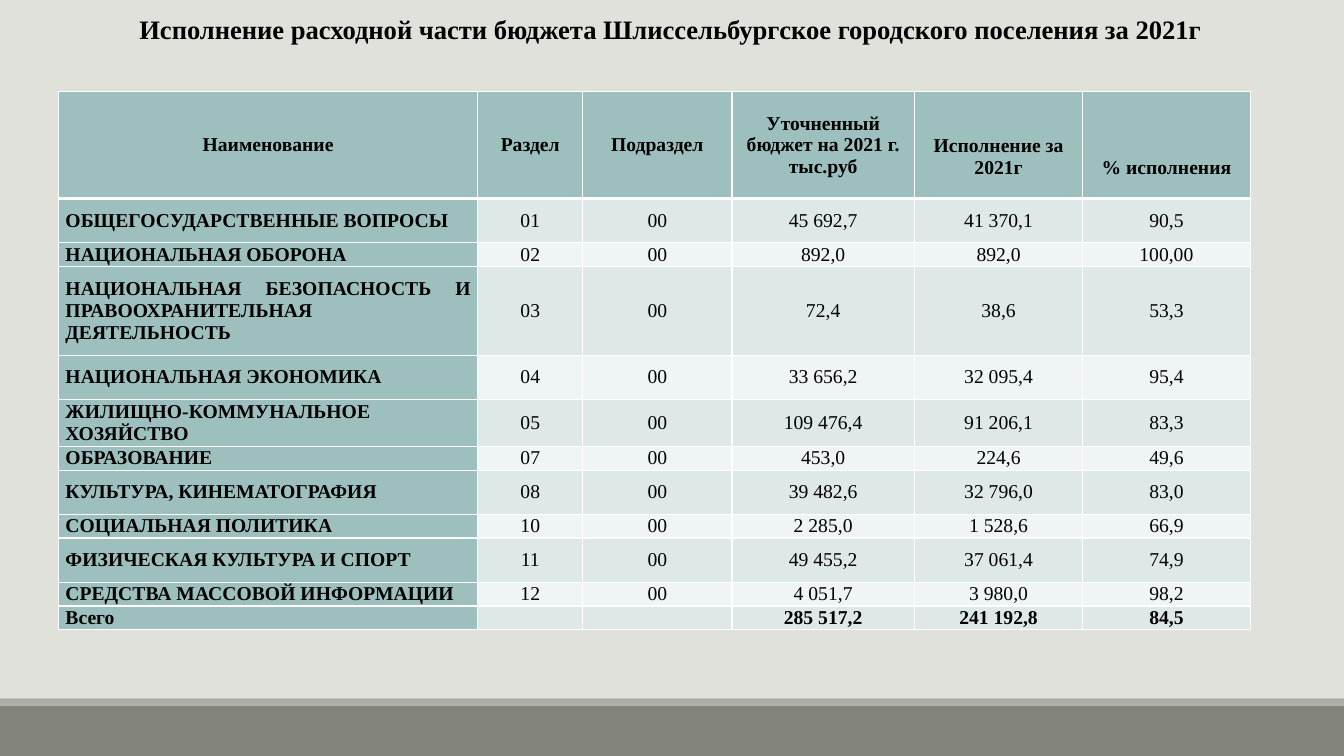
from lxml import etree
from pptx import Presentation
from pptx.dml.color import RGBColor
from pptx.enum.shapes import MSO_SHAPE
from pptx.enum.text import MSO_ANCHOR, PP_ALIGN
from pptx.oxml.ns import qn
from pptx.util import Inches, Pt

RECT = MSO_SHAPE.RECTANGLE
MIDDLE, BOTTOM = MSO_ANCHOR.MIDDLE, MSO_ANCHOR.BOTTOM
CENTER, JUSTIFY = PP_ALIGN.CENTER, PP_ALIGN.JUSTIFY
FONT = "Times New Roman"
COLORS = {
    "back": "E1E1DB", "bar": "82847C", "strip": "ACADA8", "text": "000000",
    "head": "9DBFBE", "odd": "DFE8E8", "even": "EFF4F4", "border": "FFFFFF",
}


def color(name):
    return RGBColor.from_string(COLORS[name])


def write(frame, text, size=14, bold=False, align=CENTER):
    para = frame.paragraphs[0]
    para.alignment = align
    if not text:
        # An empty cell needs its own text size so that its row stays low
        etree.SubElement(para._p, qn("a:endParaRPr"), sz=str(size * 100))
        return
    run = para.add_run()
    run.text = text
    run.font.name = FONT
    run.font.size = Pt(size)
    run.font.bold = bold
    run.font.color.rgb = color("text")


prs = Presentation()
prs.slide_width, prs.slide_height = Inches(13.33), Inches(7.5)
slide = prs.slides.add_slide(prs.slide_layouts[6])
slide.background.fill.solid()
slide.background.fill.fore_color.rgb = color("back")

# Bars along the bottom
for name, top, height in [("bar", 7, 0.5), ("strip", 6.93, 0.07)]:
    bar = slide.shapes.add_shape(RECT, 0, Inches(top), Inches(13.33), Inches(height))
    bar.shadow.inherit = False
    bar.fill.solid()
    bar.fill.fore_color.rgb = color(name)
    bar.line.fill.background()

# Title
title = slide.shapes.add_textbox(Inches(0.32), Inches(0.08), Inches(12.66), Inches(0.42))
title.text_frame.word_wrap = True
write(title.text_frame,
      "Исполнение расходной части бюджета Шлиссельбургское городского поселения за 2021г",
      size=19, bold=True)

# Budget table
widths = [4.16, 1.04, 1.48, 1.81, 1.67, 1.66]
heights = [1.06, 0.44, 0.22, 0.88, 0.44, 0.44, 0.22, 0.44, 0.22, 0.44, 0.22, 0.22]
rows = [
    ("Наименование", "Раздел", "Подраздел", "Уточненный бюджет на 2021 г. тыс.руб",
     "Исполнение за 2021г", "% исполнения"),
    ("ОБЩЕГОСУДАРСТВЕННЫЕ ВОПРОСЫ", "01", "00", "45 692,7", "41 370,1", "90,5"),
    ("НАЦИОНАЛЬНАЯ ОБОРОНА", "02", "00", "892,0", "892,0", "100,00"),
    ("НАЦИОНАЛЬНАЯ БЕЗОПАСНОСТЬ И ПРАВООХРАНИТЕЛЬНАЯ ДЕЯТЕЛЬНОСТЬ",
     "03", "00", "72,4", "38,6", "53,3"),
    ("НАЦИОНАЛЬНАЯ ЭКОНОМИКА", "04", "00", "33 656,2", "32 095,4", "95,4"),
    ("ЖИЛИЩНО-КОММУНАЛЬНОЕ ХОЗЯЙСТВО", "05", "00", "109 476,4", "91 206,1", "83,3"),
    ("ОБРАЗОВАНИЕ", "07", "00", "453,0", "224,6", "49,6"),
    ("КУЛЬТУРА, КИНЕМАТОГРАФИЯ", "08", "00", "39 482,6", "32 796,0", "83,0"),
    ("СОЦИАЛЬНАЯ ПОЛИТИКА", "10", "00", "2 285,0", "1 528,6", "66,9"),
    ("ФИЗИЧЕСКАЯ КУЛЬТУРА И СПОРТ", "11", "00", "49 455,2", "37 061,4", "74,9"),
    ("СРЕДСТВА МАССОВОЙ ИНФОРМАЦИИ", "12", "00", "4 051,7", "3 980,0", "98,2"),
    ("Всего", "", "", "285 517,2", "241 192,8", "84,5"),
]
last = len(rows) - 1
table = slide.shapes.add_table(len(rows), len(widths), Inches(0.58), Inches(0.91),
                               Inches(sum(widths)), Inches(sum(heights))).table
for col, width in zip(table.columns, widths):
    col.width = Inches(width)
for row, height in zip(table.rows, heights):
    row.height = Inches(height)

for r, values in enumerate(rows):
    for c, value in enumerate(values):
        cell = table.cell(r, c)
        low = r == 0 and c >= 4
        cell.vertical_anchor = BOTTOM if low else MIDDLE
        cell.margin_left = cell.margin_right = Inches(0.07)
        cell.margin_top = 0
        cell.margin_bottom = Inches(0.2 if low else 0)
        write(cell.text_frame, value, bold=r in (0, last) or c == 0,
              align=JUSTIFY if r and c == 0 else CENTER)

        # The line under the header row is thicker
        props = cell._tc.get_or_add_tcPr()
        for side in "LRTB":
            thick = (r, side) in [(0, "B"), (1, "T")]
            line = etree.SubElement(props, qn("a:ln" + side), w=str(Pt(3 if thick else 1)))
            fill = etree.SubElement(line, qn("a:solidFill"))
            etree.SubElement(fill, qn("a:srgbClr"), val=COLORS["border"])
        cell.fill.solid()
        shade = "head" if r == 0 or c == 0 else "odd" if r % 2 else "even"
        cell.fill.fore_color.rgb = color(shade)

prs.save("out.pptx")
